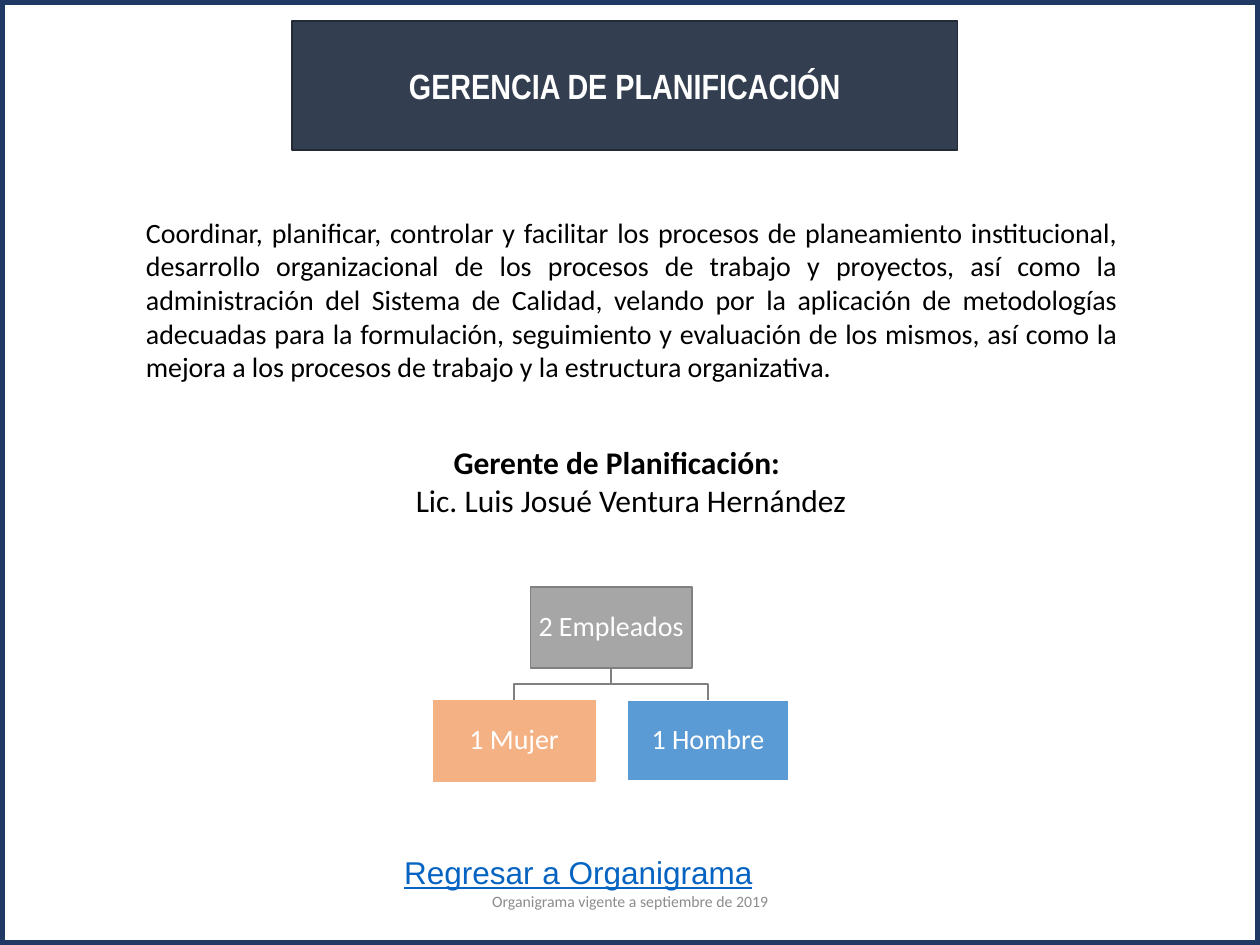
from dataclasses import dataclass

from pptx import Presentation
from pptx.dml.color import RGBColor
from pptx.enum.shapes import MSO_SHAPE
from pptx.enum.text import MSO_ANCHOR, MSO_AUTO_SIZE, PP_ALIGN
from pptx.util import Pt

RECTANGLE = MSO_SHAPE.RECTANGLE
TOP, MIDDLE = MSO_ANCHOR.TOP, MSO_ANCHOR.MIDDLE
LEFT, CENTER, JUSTIFY = PP_ALIGN.LEFT, PP_ALIGN.CENTER, PP_ALIGN.JUSTIFY
NO_AUTOSIZE = MSO_AUTO_SIZE.NONE
TITLE_ONLY = 5


@dataclass(frozen=True)
class Theme:
    frame: str = "203864"
    title_fill: str = "333F50"
    title_line: str = "222A35"
    text: str = "000000"
    inverse: str = "FFFFFF"
    link: str = "0563C1"
    muted: str = "8C8C8C"
    branch: str = "808080"
    total: str = "A6A6A6"
    women: str = "F4B183"
    men: str = "5B9BD5"
    body_font: str = "Calibri"
    title_font: str = "Arial Narrow"
    link_font: str = "Arial"
    title_size: float = 20
    heading_size: float = 18
    body_size: float = 16
    footer_size: float = 9


THEME = Theme()


def write(paragraph, text, *, size=THEME.body_size, color=THEME.text, font=THEME.body_font,
          bold=False, underline=False, align=CENTER, line_spacing=None, right_indent=0):
    """Fill one paragraph; right_indent (points) moves centred text to the left."""
    if right_indent:
        paragraph._p.get_or_add_pPr().set("marR", str(Pt(right_indent)))
    paragraph.alignment = align
    if line_spacing:
        paragraph.line_spacing = line_spacing
    run = paragraph.add_run()
    run.text = text
    run.font.name = font
    run.font.size = Pt(size)
    run.font.bold = bold
    run.font.underline = underline
    run.font.color.rgb = RGBColor.from_string(color)


class SlideBuilder:
    """Adds styled elements to one slide; all positions are in points."""

    def __init__(self, slide, theme):
        self.slide = slide
        self.theme = theme

    def paint(self, shape, fill, line, line_width=1):
        if fill:
            shape.fill.solid()
            shape.fill.fore_color.rgb = RGBColor.from_string(fill)
        else:
            shape.fill.background()
        shape.line.color.rgb = RGBColor.from_string(line)
        shape.line.width = Pt(line_width)

    def rectangle(self, left, top, width, height, fill, line, line_width=1):
        shape = self.slide.shapes.add_shape(RECTANGLE, Pt(left), Pt(top), Pt(width), Pt(height))
        shape.shadow.inherit = False
        self.paint(shape, fill, line, line_width)
        return shape

    def title(self, text, left, top, width, height):
        title = self.slide.shapes.title
        title.left, title.top = Pt(left), Pt(top)
        title.width, title.height = Pt(width), Pt(height)
        self.paint(title, self.theme.title_fill, self.theme.title_line)
        frame = title.text_frame
        frame.auto_size = NO_AUTOSIZE
        frame.vertical_anchor = MIDDLE
        write(frame.paragraphs[0], text, size=self.theme.title_size, bold=True,
              color=self.theme.inverse, font=self.theme.title_font)

    def text(self, left, top, width, height, *lines, anchor=TOP):
        """Add a text box; each line is a pair of text and format."""
        box = self.slide.shapes.add_textbox(Pt(left), Pt(top), Pt(width), Pt(height))
        frame = box.text_frame
        frame.word_wrap = True
        frame.vertical_anchor = anchor
        for index, (line, style) in enumerate(lines):
            paragraph = frame.add_paragraph() if index else frame.paragraphs[0]
            write(paragraph, line, **style)

    def node(self, text, center, top, width, height, fill, line):
        shape = self.rectangle(center - width / 2, top, width, height, fill, line)
        frame = shape.text_frame
        frame.word_wrap = True
        frame.vertical_anchor = MIDDLE
        frame.margin_left = frame.margin_right = Pt(0.8)
        frame.margin_top = frame.margin_bottom = Pt(0.8)
        write(frame.paragraphs[0], text, color=self.theme.inverse, line_spacing=0.9)

    def branch(self, start_x, start_y, end_x, end_y):
        """Draw an elbow line that turns halfway down."""
        middle_y = (start_y + end_y) / 2
        builder = self.slide.shapes.build_freeform(Pt(start_x), Pt(start_y))
        corners = [(start_x, middle_y), (end_x, middle_y), (end_x, end_y)]
        builder.add_line_segments([(Pt(x), Pt(y)) for x, y in corners], close=False)
        shape = builder.convert_to_shape()
        shape.shadow.inherit = False
        self.paint(shape, None, self.theme.branch)

    def staff_tree(self, root, children, center, top, width=92.2, height=46.1,
                   column_gap=18.6, row_gap=18.7):
        """Centre a row of children below a root; each node is text, fill and line."""
        child_top = top + height + row_gap
        pitch = width + column_gap
        first = center - pitch * (len(children) - 1) / 2
        centers = [first + pitch * index for index in range(len(children))]
        for child_center in centers:
            self.branch(center, top + height, child_center, child_top)
        self.node(root[0], center, top, width, height, *root[1:])
        for child_center, (text, fill, line) in zip(centers, children):
            self.node(text, child_center, child_top, width, height, fill, line)


def main():
    presentation = Presentation()
    presentation.slide_width, presentation.slide_height = Pt(720), Pt(540)
    slide = presentation.slides.add_slide(presentation.slide_layouts[TITLE_ONLY])
    page = SlideBuilder(slide, THEME)

    page.rectangle(0, 0, 720, 540, None, THEME.frame, 6)
    # The frame goes behind the title placeholder.
    tree = slide.shapes._spTree
    tree.append(slide.shapes.title._element)
    page.title("GERENCIA DE PLANIFICACIÓN", 167, 12.2, 380.2, 73.4)

    page.text(76.3, 119.5, 569.5, 104.4, (
        "Coordinar, planificar, controlar y facilitar los procesos de planeamiento "
        "institucional, desarrollo organizacional de los procesos de trabajo y proyectos, "
        "así como la administración del Sistema de Calidad, velando por la aplicación de "
        "metodologías adecuadas para la formulación, seguimiento y evaluación de los mismos, "
        "así como la mejora a los procesos de trabajo y la estructura organizativa.",
        {"align": JUSTIFY}))

    page.text(
        209.5, 249.8, 306, 51.1,
        ("Gerente de Planificación:",
         {"size": THEME.heading_size, "bold": True, "right_indent": 20}),
        ("Lic. Luis Josué Ventura Hernández",
         {"size": THEME.heading_size, "right_indent": 4}))

    page.staff_tree(
        ("2 Empleados", THEME.total, THEME.branch),
        [("1 Mujer", THEME.women, THEME.women), ("1 Hombre", THEME.men, THEME.inverse)],
        center=349.2, top=335.5)

    page.text(223.9, 483.8, 235.4, 28.8, (
        "Regresar a Organigrama",
        {"size": THEME.heading_size, "color": THEME.link, "font": THEME.link_font,
         "underline": True, "align": LEFT}))
    page.text(238.3, 500.4, 243.4, 28.8, (
        "Organigrama vigente a septiembre de 2019",
        {"size": THEME.footer_size, "color": THEME.muted}), anchor=MIDDLE)

    presentation.save("out.pptx")


if __name__ == "__main__":
    main()
